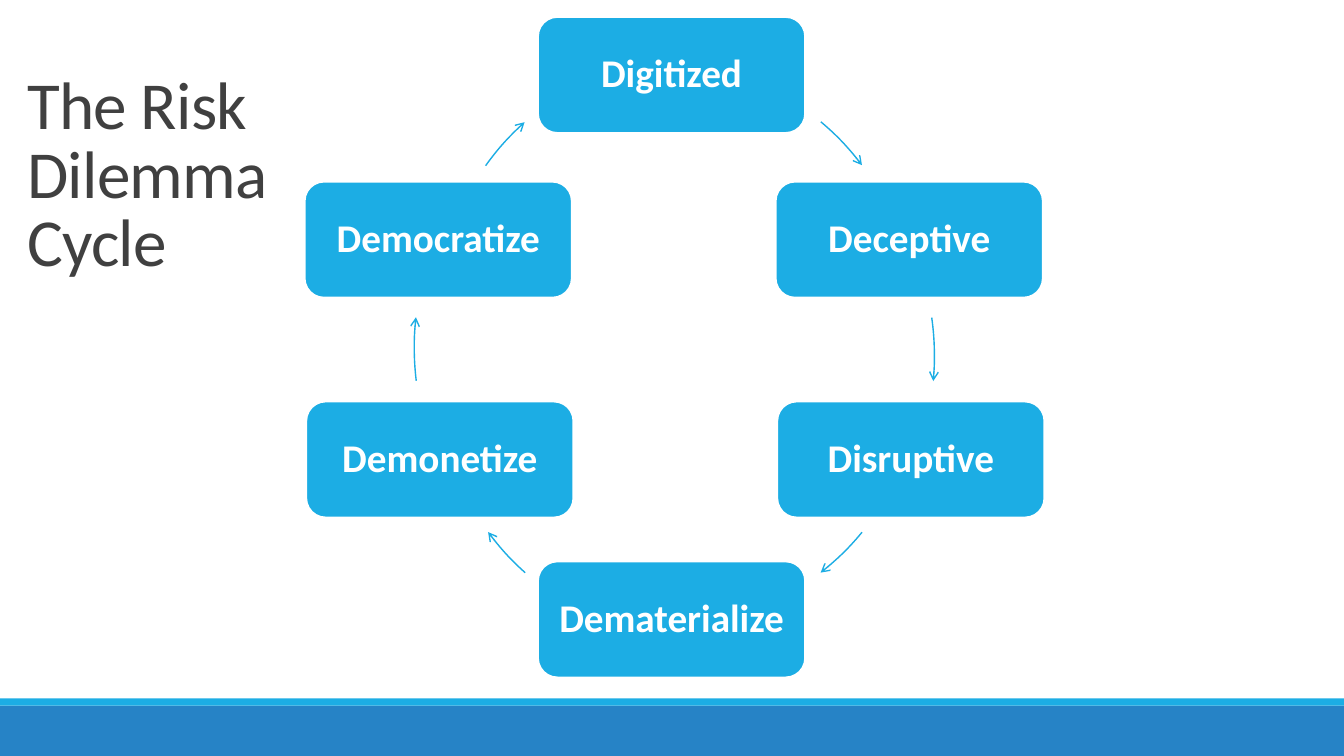
from lxml.etree import SubElement
from pptx import Presentation
from pptx.dml.color import RGBColor
from pptx.enum.shapes import MSO_SHAPE
from pptx.enum.text import MSO_ANCHOR, MSO_AUTO_SIZE, PP_ALIGN
from pptx.oxml.ns import qn
from pptx.util import Cm, Pt

FONT = "Calibri"
CYAN, BLUE, WHITE, GREY = "1CADE4", "2683C6", "FFFFFF", "404040"
NODE_W, NODE_H = 6.73, 2.92
CYCLE_SIZE = 13.72
STAGES = [
    ("Digitized", 13.56, 0.43),
    ("Deceptive", 19.55, 4.58),
    ("Disruptive", 19.59, 10.12),
    ("Dematerialize", 13.56, 14.15),
    ("Demonetize", 7.72, 10.12),
    ("Democratize", 7.68, 4.58),
]
ARROWS = [
    (9.4, 1.45, 310.2, 322.8),
    (9.83, 2.11, 351.9, 5.3),
    (9.58, 2.18, 39.6, 51.8),
    (10.95, 2.46, 131.8, 143.4),
    (10.44, 1.9, 173, 186.4),
    (10.95, 1.32, 215.7, 228),
]


def rgb(color):
    return RGBColor.from_string(color)


def style_text(p, size, color, bold=False):
    for r in p.runs:
        r.font.name = FONT
        r.font.size = Pt(size)
        r.font.bold = bold
        r.font.color.rgb = rgb(color)


def add_box(slide, kind, x, y, w, h, fill):
    sp = slide.shapes.add_shape(kind, Cm(x), Cm(y), Cm(w), Cm(h))
    sp.shadow.inherit = False
    sp.fill.solid()
    sp.fill.fore_color.rgb = rgb(fill)
    sp.line.fill.background()
    return sp


def add_stage(slide, label, x, y):
    sp = add_box(slide, MSO_SHAPE.ROUNDED_RECTANGLE, x, y, NODE_W, NODE_H, CYAN)
    sp.line.color.rgb = rgb(WHITE)
    sp.line.width = Pt(1.25)
    tf = sp.text_frame
    tf.word_wrap = True
    tf.vertical_anchor = MSO_ANCHOR.MIDDLE
    tf.margin_left = tf.margin_right = Cm(0.3)
    tf.text = label
    p = tf.paragraphs[0]
    p.alignment = PP_ALIGN.CENTER
    p.line_spacing = 0.9
    style_text(p, 28, WHITE, bold=True)


def add_arc_arrow(slide, x, y, start, end):
    sp = slide.shapes.add_shape(
        MSO_SHAPE.ARC, Cm(x), Cm(y), Cm(CYCLE_SIZE), Cm(CYCLE_SIZE))
    sp.shadow.inherit = False
    sp.fill.background()
    sp.adjustments[0] = start * 0.6
    sp.adjustments[1] = end * 0.6
    sp.line.color.rgb = rgb(CYAN)
    sp.line.width = Pt(1)
    SubElement(sp.line._get_or_add_ln(), qn("a:tailEnd"), type="arrow")


def set_title(slide, text):
    sp = slide.shapes.title
    sp.left, sp.top, sp.width, sp.height = Cm(0.43), Cm(1.27), Cm(6.78), Cm(5.92)
    tf = sp.text_frame
    tf.text = text
    tf.word_wrap = True
    tf.auto_size = MSO_AUTO_SIZE.NONE
    tf.vertical_anchor = MSO_ANCHOR.BOTTOM
    p = tf.paragraphs[0]
    p.alignment = PP_ALIGN.LEFT
    p.line_spacing = 0.85
    style_text(p, 48, GREY)
    p.runs[0].font._element.set("spc", "-50")


def main():
    """Build the risk dilemma cycle slide."""
    prs = Presentation()
    prs.slide_width, prs.slide_height = Cm(33.87), Cm(19.05)
    slide = prs.slides.add_slide(prs.slide_layouts[5])
    set_title(slide, "The Risk Dilemma Cycle")
    add_box(slide, MSO_SHAPE.RECTANGLE, 0, 17.78, 33.87, 1.27, BLUE)
    add_box(slide, MSO_SHAPE.RECTANGLE, 0, 17.6, 33.87, 0.18, CYAN)
    for stage, arrow in zip(STAGES, ARROWS):
        add_stage(slide, *stage)
        add_arc_arrow(slide, *arrow)
    prs.save("out.pptx")


if __name__ == "__main__":
    main()
